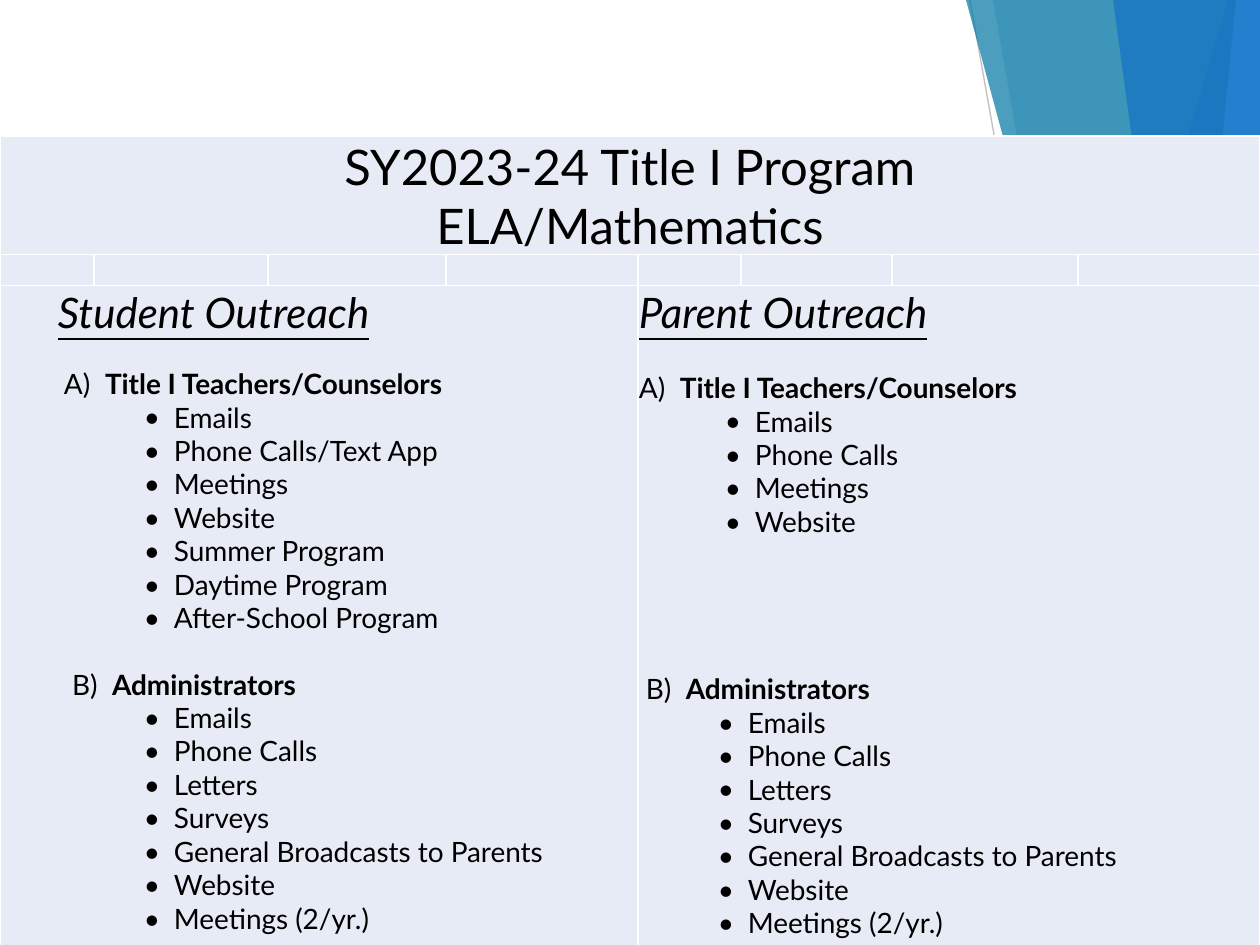
from dataclasses import dataclass
from itertools import product

from lxml.etree import SubElement
from pptx import Presentation
from pptx.dml.color import RGBColor
from pptx.enum.shapes import MSO_CONNECTOR
from pptx.enum.text import MSO_ANCHOR, PP_ALIGN
from pptx.oxml.ns import qn
from pptx.util import Emu, Pt

SCALE = 914400 / 126
WIDTH, HEIGHT = 1260, 945
TABLE_TOP = 136
COLUMN_WIDTHS = [94, 174, 178, 192, 103, 151, 186, 182]
ROW_HEIGHTS = [118, 31, 660]


@dataclass(frozen=True)
class Theme:
    font: str = "Lato"
    text: str = "000000"
    cell: str = "E7EBF5"
    border: str = "FFFFFF"
    line: str = "BFBFBF"
    blue: str = "0F6FC6"
    teal: str = "0076A3"
    sky: str = "59AAF2"
    title: int = 28
    heading: int = 24
    body: int = 16
    spacer: int = 10
    hairline: float = 0.75
    border_width: float = 1


THEME = Theme()

BANDS = [
    (1228, 950, THEME.blue, 30),
    (993, 1158, THEME.blue, 20),
    (966, 1222, THEME.teal, 70),
    (1236, 1143, THEME.sky, 70),
    (1113, 1242, THEME.blue, 65),
]

ADMINISTRATOR_ITEMS = [
    "Emails", "Phone Calls", "Letters", "Surveys",
    "General Broadcasts to Parents", "Website", "Meetings (2/yr.)",
]
STUDENT_SECTIONS = [
    ("A)", "Title I Teachers/Counselors", 30, 63, 104, 173,
     ["Emails", "Phone Calls/Text App", "Meetings", "Website",
      "Summer Program", "Daytime Program", "After-School Program"]),
    ("B)", "Administrators", 33, 71, 111, 173, ADMINISTRATOR_ITEMS),
]
PARENT_SECTIONS = [
    ("A)", "Title I Teachers/Counselors", 34, 0, 41, 116,
     ["Emails", "Phone Calls", "Meetings", "Website"]),
    ("B)", "Administrators", 134, 7, 47, 109, ADMINISTRATOR_ITEMS),
]


def px(value):
    return Emu(round(value * SCALE))


def format_run(run, size, bold=False, italic=False, underline=False):
    font = run.font
    font.name = THEME.font
    font.size = Pt(size)
    font.bold = bold
    font.italic = italic
    font.underline = underline
    font.color.rgb = RGBColor.from_string(THEME.text)


def set_indent(paragraph, left, first=0):
    properties = paragraph._p.get_or_add_pPr()
    properties.set("marL", str(px(left)))
    properties.set("indent", str(px(first)))
    return properties


def add_band(slide, top_x, bottom_x, color, opacity):
    builder = slide.shapes.build_freeform(top_x, 0, scale=SCALE)
    builder.add_line_segments([(bottom_x, HEIGHT), (WIDTH, HEIGHT), (WIDTH, 0)])
    shape = builder.convert_to_shape()
    shape.shadow.inherit = False
    shape.line.fill.background()
    shape.fill.solid()
    shape.fill.fore_color.rgb = RGBColor.from_string(color)
    color_element = shape._element.spPr.find(f"{qn('a:solidFill')}/{qn('a:srgbClr')}")
    SubElement(color_element, qn("a:alpha"), val=str(opacity * 1000))


def add_hairline(slide, start_x, end_x):
    connector = slide.shapes.add_connector(
        MSO_CONNECTOR.STRAIGHT, px(start_x), px(0), px(end_x), px(HEIGHT))
    connector.line.color.rgb = RGBColor.from_string(THEME.line)
    connector.line.width = Pt(THEME.hairline)
    SubElement(connector._element.spPr, qn("a:effectLst"))


def style_cell(cell):
    cell.margin_left = cell.margin_right = cell.margin_top = px(1)
    cell.margin_bottom = 0
    properties = cell._tc.get_or_add_tcPr()
    for side in ("lnL", "lnR", "lnT", "lnB"):
        border = SubElement(properties, qn(f"a:{side}"), w=str(Pt(THEME.border_width)))
        fill = SubElement(border, qn("a:solidFill"))
        SubElement(fill, qn("a:srgbClr"), val=THEME.border)
    cell.fill.solid()
    cell.fill.fore_color.rgb = RGBColor.from_string(THEME.cell)
    SubElement(cell.text_frame.paragraphs[0]._p, qn("a:endParaRPr"),
               sz=str(THEME.spacer * 100))


def add_table(slide):
    frame = slide.shapes.add_table(
        len(ROW_HEIGHTS), len(COLUMN_WIDTHS),
        px(0), px(TABLE_TOP), px(WIDTH), px(sum(ROW_HEIGHTS)))
    table = frame.table
    table.first_row = table.horz_banding = False
    for column, width in zip(table.columns, COLUMN_WIDTHS):
        column.width = px(width)
    for row, height in zip(table.rows, ROW_HEIGHTS):
        row.height = px(height)
    for row, column in product(range(len(ROW_HEIGHTS)), range(len(COLUMN_WIDTHS))):
        style_cell(table.cell(row, column))
    for row, first, last in [(0, 0, 7), (2, 0, 3), (2, 4, 7)]:
        table.cell(row, first).merge(table.cell(row, last))
    return table


def fill_title(cell, text):
    cell.vertical_anchor = MSO_ANCHOR.MIDDLE
    paragraph = cell.text_frame.paragraphs[0]
    paragraph.text = text
    paragraph.alignment = PP_ALIGN.CENTER
    for run in paragraph.runs:
        format_run(run, THEME.title)


def add_section(text_frame, label, title, gap, label_x, title_x, item_x, items):
    paragraph = text_frame.add_paragraph()
    paragraph.text = f"{label}\t"
    paragraph.space_before = px(gap)
    set_indent(paragraph, title_x, label_x - title_x)
    format_run(paragraph.runs[0], THEME.body)
    title_run = paragraph.add_run()
    title_run.text = title
    format_run(title_run, THEME.body, bold=True)
    for item in items:
        paragraph = text_frame.add_paragraph()
        paragraph.text = item
        properties = set_indent(paragraph, item_x, -30)
        SubElement(properties, qn("a:buFont"), typeface=THEME.font)
        SubElement(properties, qn("a:buChar"), char="•")
        format_run(paragraph.runs[0], THEME.body)


def fill_outreach(cell, heading, heading_x, sections):
    paragraph = cell.text_frame.paragraphs[0]
    paragraph.text = heading
    set_indent(paragraph, heading_x)
    format_run(paragraph.runs[0], THEME.heading, italic=True, underline=True)
    for section in sections:
        add_section(cell.text_frame, *section)


def main():
    presentation = Presentation()
    presentation.slide_width = px(WIDTH)
    presentation.slide_height = px(HEIGHT)
    slide = presentation.slides.add_slide(presentation.slide_layouts[6])
    add_hairline(slide, 970, 1139)
    for band in BANDS:
        add_band(slide, *band)
    table = add_table(slide)
    fill_title(table.cell(0, 0), "SY2023-24 Title I Program\vELA/Mathematics")
    fill_outreach(table.cell(2, 0), "Student Outreach", 57, STUDENT_SECTIONS)
    fill_outreach(table.cell(2, 4), "Parent Outreach", 0, PARENT_SECTIONS)
    presentation.save("out.pptx")


if __name__ == "__main__":
    main()
